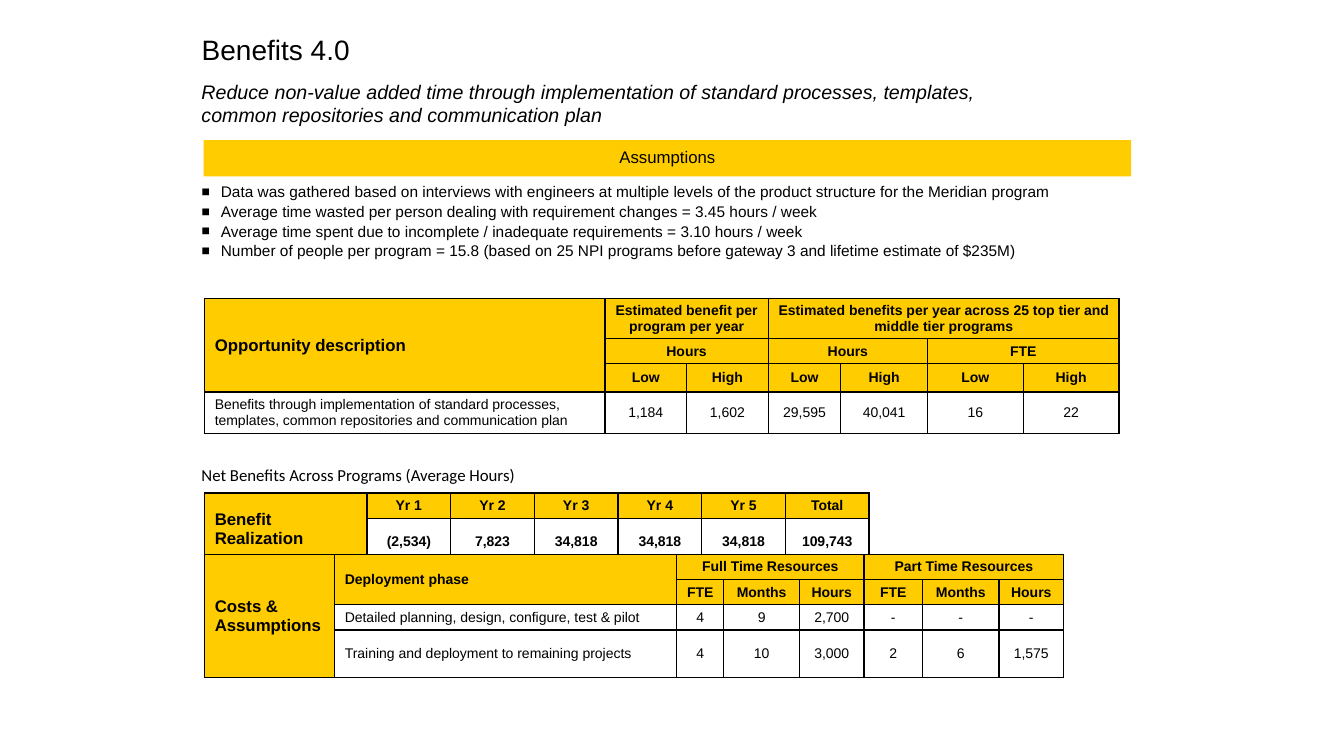
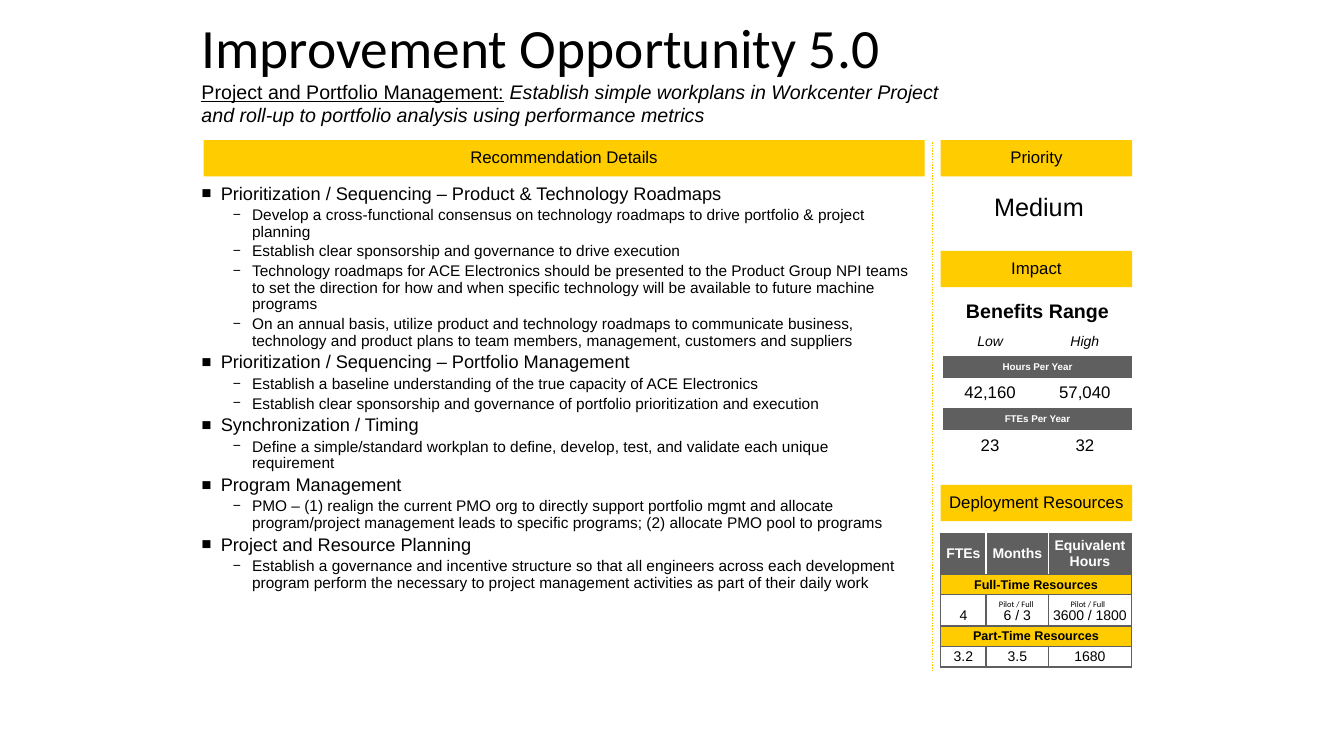
from lxml import etree
from pptx import Presentation
from pptx.dml.color import RGBColor
from pptx.enum import dml, shapes, text
from pptx.oxml.ns import qn
from pptx.util import Inches, Pt

GOLD = RGBColor(0xFF, 0xCC, 0x00)
GRAY = RGBColor(0x5F, 0x5F, 0x5F)
BLACK = RGBColor(0, 0, 0)
WHITE = RGBColor(0xFF, 0xFF, 0xFF)

LEFT, CENTER = text.PP_ALIGN.LEFT, text.PP_ALIGN.CENTER
MIDDLE, BOTTOM, TOP = (text.MSO_ANCHOR.MIDDLE, text.MSO_ANCHOR.BOTTOM,
                       text.MSO_ANCHOR.TOP)
NO_STYLE = "{2D5ABB26-0587-4C30-8999-92F81FD0307C}"
BULLETS = [("■", 0.19, 13), ("−", 0.5, 11)]  # character, indent, size

TEXT_X, BAND_X, BAND_Y, BAND_H = 1.9, 2.02, 1.39, 0.36
TABLE_X = 2.03
SIDE_X, SIDE_W = 9.33, 1.9


def box(left, top, width, height):
    return [Inches(v) for v in (left, top, width, height)]


def place(sp, *at):
    sp.left, sp.top, sp.width, sp.height = box(*at)


def add_run(p, words, size, color=BLACK, name="Arial", **more):
    r = p.add_run()
    r.text = words
    r.font.color.rgb = color
    for key, value in {"size": Pt(size), "name": name, **more}.items():
        setattr(r.font, key, value)


def add_text(s, at, runs, align=LEFT, anchor=TOP, wrap=True):
    """Text box with one paragraph of (words, font values) runs."""
    tf = s.shapes.add_textbox(*box(*at)).text_frame
    tf.word_wrap, tf.vertical_anchor = wrap, anchor
    tf.paragraphs[0].alignment = align
    for words, font in runs:
        add_run(tf.paragraphs[0], words, **font)


def set_title(s, words, size, name):
    sp = s.shapes.title
    place(sp, TEXT_X, 0.17, 9.32, 0.67)
    tf = sp.text_frame
    tf.auto_size, tf.vertical_anchor = text.MSO_AUTO_SIZE.NONE, MIDDLE
    p = tf.paragraphs[0]
    p.alignment, p.line_spacing = LEFT, 0.9
    add_run(p, words, size, name=name)


def add_subtitle(s, width, runs):
    add_text(s, (TEXT_X, 0.74, width, 0.57), runs, anchor=MIDDLE)


def set_bullets(s, width, height, items, sizes):
    """Fill the body placeholder with (level, words) items."""
    sp = s.placeholders[1]
    place(sp, TEXT_X, 1.78, width, height)
    tf = sp.text_frame
    tf.auto_size, tf.vertical_anchor = text.MSO_AUTO_SIZE.NONE, TOP
    for i, (level, words) in enumerate(items):
        p = tf.add_paragraph() if i else tf.paragraphs[0]
        char, indent, _ = BULLETS[level]
        p.level, p.line_spacing = level, 0.9
        pPr = p._p.get_or_add_pPr()
        pPr.set("marL", str(Inches(indent)))
        pPr.set("indent", str(Inches(-0.19)))
        etree.SubElement(pPr, qn("a:buSzPct")).set("val", "90000")
        etree.SubElement(pPr, qn("a:buChar")).set("char", char)
        add_run(p, words, sizes[level])


def add_band(s, words, left, top, width, side_inset=0.08):
    sp = s.shapes.add_shape(shapes.MSO_SHAPE.RECTANGLE,
                            *box(left, top, width, BAND_H))
    sp.shadow.inherit = False
    sp.fill.solid()
    sp.fill.fore_color.rgb = GOLD
    sp.line.fill.background()
    tf = sp.text_frame
    tf.margin_left = tf.margin_right = Inches(side_inset)
    tf.word_wrap, tf.vertical_anchor = True, MIDDLE
    p = tf.paragraphs[0]
    p.alignment, p.line_spacing = CENTER, 0.9
    add_run(p, words, 12)


def set_border(cell, side, color):
    ln = etree.SubElement(cell._tc.get_or_add_tcPr(), qn("a:ln" + side))
    ln.set("w", str(Pt(1)))
    fill = etree.SubElement(ln, qn("a:solidFill"))
    etree.SubElement(fill, qn("a:srgbClr")).set("val", str(color))


def format_cell(cell, words, border=None, sides=None, fill=None,
                insets=(0.1, 0.05), align=CENTER, anchor=MIDDLE, **font):
    """Insets are (left and right, top and bottom)."""
    if border is not None:
        for side in "LRTB":
            set_border(cell, side, (sides or {}).get(side, border))
    if fill is None:
        cell.fill.background()
    else:
        cell.fill.solid()
        cell.fill.fore_color.rgb = fill
    cell.margin_left = cell.margin_right = Inches(insets[0])
    cell.margin_top = cell.margin_bottom = Inches(insets[1])
    cell.vertical_anchor = anchor
    p = cell.text_frame.paragraphs[0]
    p.alignment = align
    if words:
        add_run(p, words, **font)
    else:
        etree.SubElement(p._p, qn("a:endParaRPr")).set("sz", "600")


def add_table(s, at, widths, heights, rows, spans, look):
    """Table whose cell format is look(row, column); spans are corner pairs."""
    frame = s.shapes.add_table(len(heights), len(widths),
                               *box(*at, sum(widths), sum(heights)))
    table = frame.table
    table.first_row = table.horz_banding = False
    table._tbl.tblPr.find(qn("a:tableStyleId")).text = NO_STYLE
    for lane, width in zip(table.columns, widths):
        lane.width = Inches(width)
    for lane, height in zip(table.rows, heights):
        lane.height = Inches(height)
    for first, last in spans:
        table.cell(*first).merge(table.cell(*last))
    for r, row in enumerate(rows):
        for c, words in enumerate(row):
            format_cell(table.cell(r, c), words, **look(r, c))


def grid_look(header_rows, title_rows, left_cols=(0,), bold_body=False):
    """Gold headers, a large title cell in column 0, plain figures below."""
    def look(r, c):
        title = c == 0 and r < title_rows
        header = title or r < header_rows
        return {"border": BLACK, "fill": GOLD if header else None,
                "insets": (0.1, 0.03),
                "size": 12 if title else 10, "bold": header or bold_body,
                "align": LEFT if c in left_cols else CENTER}
    return look


def range_look(r, c):
    if r in (2, 4):
        return {"fill": GRAY, "size": 7, "color": WHITE, "bold": True}
    return [{"size": 14, "bold": True}, {"size": 10, "italic": True}][r] \
        if r < 2 else {"size": 12}


def resource_look(r, c):
    look = {"border": GRAY, "insets": (0.03, 0.02), "size": 10}
    if r == 0:
        inner = {side: WHITE for side, edge in (("L", 0), ("R", 2)) if c != edge}
        look.update(fill=GRAY, color=WHITE, bold=True, sides=inner)
    elif r in (1, 3):
        look.update(fill=GOLD, size=9, bold=True)
    else:
        look.update(anchor=BOTTOM)
    return look


def add_dotted_line(s, x, top, bottom):
    line = s.shapes.add_connector(shapes.MSO_CONNECTOR.STRAIGHT,
                                  *box(x, top, x, bottom))
    line.line.color.rgb = GOLD
    line.line.width = Pt(1)
    line.line.dash_style = dml.MSO_LINE.ROUND_DOT
    etree.SubElement(line._element.spPr, qn("a:effectLst"))


def build_benefits(s):
    set_title(s, "Benefits 4.0", 20, "Arial")
    add_subtitle(s, 7.99, [(
        "Reduce non-value added time through implementation of standard "
        "processes, templates, common repositories and communication plan",
        {"size": 14, "italic": True})])
    add_band(s, "Assumptions", BAND_X, BAND_Y, 9.2)
    set_bullets(s, 8.77, 0.89, [(0, words) for words in (
        "Data was gathered based on interviews with engineers at multiple "
        "levels of the product structure for the Meridian program",
        "Average time wasted per person dealing with requirement changes = 3.45 hours / week",
        "Average time spent due to incomplete / inadequate requirements = 3.10 hours / week",
        "Number of people per program = 15.8 (based on 25 NPI programs before "
        "gateway 3 and lifetime estimate of $235M)")], sizes=[11])

    add_table(
        s, (TABLE_X, 2.96), [3.97, 0.81, 0.81, 0.72, 0.86, 0.95, 0.95],
        [0.4, 0.25, 0.28, 0.41],
        [["Opportunity description", "Estimated benefit per program per year", "",
          "Estimated benefits per year across 25 top tier and middle tier programs",
          "", "", ""],
         ["", "Hours", "", "Hours", "", "FTE", ""],
         [""] + ["Low", "High"] * 3,
         ["Benefits through implementation of standard processes, templates, "
          "common repositories and communication plan",
          "1,184", "1,602", "29,595", "40,041", "16", "22"]],
        [((0, 0), (2, 0)), ((0, 1), (0, 2)), ((0, 3), (0, 6))]
        + [((1, c), (1, c + 1)) for c in (1, 3, 5)],
        grid_look(header_rows=3, title_rows=3))

    add_text(s, (TEXT_X, 4.56, 3.35, 0.3), [(
        "Net Benefits Across Programs (Average Hours)",
        {"size": 12, "name": "Calibri"})], wrap=False)
    add_table(
        s, (TABLE_X, 4.89), [1.61] + [0.83] * 6, [0.25, 0.45],
        [["Benefit Realization"] + [f"Yr {n}" for n in range(1, 6)] + ["Total"],
         ["", "(2,534)", "7,823", "34,818", "34,818", "34,818", "109,743"]],
        [((0, 0), (1, 0))],
        grid_look(header_rows=1, title_rows=2, bold_body=True))
    add_table(
        s, (TABLE_X, 5.5), [1.29, 3.39, 0.47, 0.75, 0.64, 0.58, 0.76, 0.64],
        [0.25, 0.25, 0.25, 0.47],
        [["Costs & Assumptions", "Deployment phase", "Full Time Resources", "", "",
          "Part Time Resources", "", ""],
         ["", ""] + ["FTE", "Months", "Hours"] * 2,
         ["", "Detailed planning, design, configure, test & pilot",
          "4", "9", "2,700", "-", "-", "-"],
         ["", "Training and deployment to remaining projects",
          "4", "10", "3,000", "2", "6", "1,575"]],
        [((0, 0), (3, 0)), ((0, 1), (1, 1)), ((0, 2), (0, 4)), ((0, 5), (0, 7))],
        grid_look(header_rows=2, title_rows=4, left_cols=(0, 1)))


def build_opportunity(s):
    set_title(s, "Improvement Opportunity 5.0", 39.6, "Calibri")
    add_subtitle(s, 7.78, [
        ("Project and Portfolio Management:", {"size": 14, "underline": True}),
        (" Establish simple workplans in Workcenter Project and roll-up to "
         "portfolio analysis using performance metrics",
         {"size": 14, "italic": True})])
    set_bullets(s, 7.25, 4.29, [
        (0, "Prioritization / Sequencing – Product & Technology Roadmaps"),
        (1, "Develop a cross-functional consensus on technology roadmaps to "
            "drive portfolio & project planning"),
        (1, "Establish clear sponsorship and governance to drive execution"),
        (1, "Technology roadmaps for ACE Electronics should be presented to the "
            "Product Group NPI teams to set the direction for how and when specific "
            "technology will be available to future machine programs"),
        (1, "On an annual basis, utilize product and technology roadmaps to "
            "communicate business, technology and product plans to team members, "
            "management, customers and suppliers"),
        (0, "Prioritization / Sequencing – Portfolio Management"),
        (1, "Establish a baseline understanding of the true capacity of ACE Electronics"),
        (1, "Establish clear sponsorship and governance of portfolio "
            "prioritization and execution"),
        (0, "Synchronization / Timing"),
        (1, "Define a simple/standard workplan to define, develop, test, and "
            "validate each unique requirement"),
        (0, "Program Management"),
        (1, "PMO – (1) realign the current PMO org to directly support portfolio "
            "mgmt and allocate program/project management leads to specific "
            "programs; (2) allocate PMO pool to programs"),
        (0, "Project and Resource Planning"),
        (1, "Establish a governance and incentive structure so that all engineers "
            "across each development program perform the necessary to project "
            "management activities as part of their daily work"),
    ], sizes=[size for _, _, size in BULLETS])

    add_band(s, "Recommendation Details", BAND_X, BAND_Y, 7.15)
    add_band(s, "Priority", SIDE_X, BAND_Y, SIDE_W)
    add_band(s, "Impact", SIDE_X, 2.49, SIDE_W)
    add_band(s, "Deployment Resources", SIDE_X, 4.81, SIDE_W, side_inset=0)
    add_dotted_line(s, 9.25, 1.41, 6.66)
    add_text(s, (9.34, 1.87, 1.93, 0.36), [("Medium", {"size": 18})],
             align=CENTER, anchor=MIDDLE)

    add_table(
        s, (9.35, 2.92), [0.94, 0.94], [0.34, 0.25, 0.22, 0.3, 0.22, 0.3],
        [["Benefits Range", ""], ["Low", "High"], ["Hours Per Year", ""],
         ["42,160", "57,040"], ["FTEs Per Year", ""], ["23", "32"]],
        [((r, 0), (r, 1)) for r in (0, 2, 4)], range_look)
    add_table(
        s, (SIDE_X, 5.29), [0.45, 0.62, 0.82], [0.41, 0.2, 0.31, 0.2, 0.2],
        [["FTEs", "Months", "Equivalent Hours"], ["Full-Time Resources", "", ""],
         ["4", "6 / 3", "3600 / 1800"], ["Part-Time Resources", "", ""],
         ["3.2", "3.5", "1680"]],
        [((r, 0), (r, 2)) for r in (1, 3)], resource_look)
    for left in (9.81, 10.52):
        add_text(s, (left, 5.89, 0.64, 0.2),
                 [("Pilot / Full", {"size": 6, "name": "Calibri"})])


def main():
    prs = Presentation()
    prs.slide_width, prs.slide_height = Inches(13.33), Inches(7.5)
    for build in (build_benefits, build_opportunity):
        build(prs.slides.add_slide(prs.slide_layouts[1]))
    prs.save("out.pptx")


if __name__ == "__main__":
    main()
